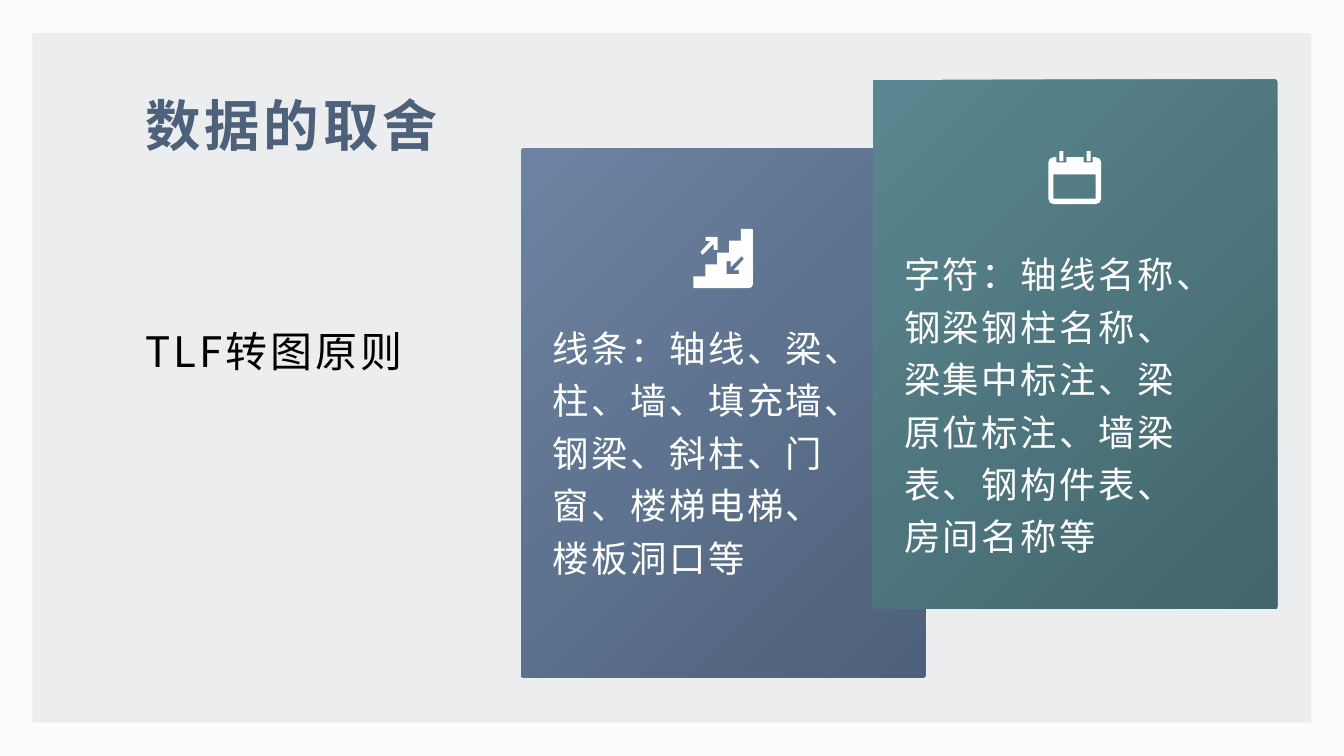
from dataclasses import dataclass

from lxml.etree import SubElement
from pptx import Presentation
from pptx.dml.color import RGBColor
from pptx.enum.lang import MSO_LANGUAGE_ID as Language
from pptx.enum.shapes import MSO_SHAPE as Shape
from pptx.enum.text import MSO_ANCHOR as Anchor, MSO_AUTO_SIZE as AutoSize, PP_ALIGN as Align
from pptx.oxml.ns import qn
from pptx.slide import Slide
from pptx.text.text import TextFrame
from pptx.util import Pt

FONT = "Noto Sans CJK SC"
COLORS = {
    "page": "FCFCFD", "panel": "ECEDEF", "title": "4E617A", "black": "000000", "white": "FFFFFF",
    "blue light": "6B82A0", "blue dark": "4E617A", "teal light": "598690", "teal dark": "43656C",
}
ICON_UNIT = Pt(0.072)
Point = tuple[int, int]
Contour = list[Point]


@dataclass(frozen=True)
class TextStyle:
    size: float
    color: str
    tracking: float
    bold: bool = False
    line_spacing: float = 1.0
    space_after: float = 0


@dataclass(frozen=True)
class Card:
    left: float
    top: float
    hue: str
    text: str
    text_top: float
    icon_left: float
    icon_top: float
    icon: list[Contour]


TITLE = TextStyle(39.6, "title", 2.8, bold=True, line_spacing=1.1)
SUBTITLE = TextStyle(30, "black", 2.2)
BODY = TextStyle(26, "white", 1.8, line_spacing=1.2, space_after=8)


def color(name: str) -> RGBColor:
    return RGBColor.from_string(COLORS[name])


def rectangle(left: int, top: int, right: int, bottom: int) -> Contour:
    return [(left, top), (right, top), (right, bottom), (left, bottom)]


def stairs_icon() -> list[Contour]:
    tread = 118
    outline = [(580, 0), (590, 10), (590, 550), (578, 578), (550, 590)]
    for step in range(5):
        x = tread * step
        y = tread * (4 - step)
        outline += [(x, y + tread), (x, y)]
    down_arrow = [(480, 270), (370, 380), (370, 320), (330, 320), (330, 450),
                  (450, 450), (450, 410), (400, 410), (500, 300)]
    up_arrow = [(570 - x, 530 - y) for x, y in down_arrow]
    return [outline, down_arrow, up_arrow]


def calendar_icon() -> list[Contour]:
    body = [(470, 60), (440, 60), (440, 110), (350, 110), (350, 60), (180, 60), (180, 110),
            (80, 110), (80, 60), (50, 60), (15, 75), (0, 110), (0, 470), (15, 510), (50, 525),
            (470, 525), (510, 510), (525, 470), (525, 110), (510, 75)]
    return [body, rectangle(50, 230, 470, 470),
            rectangle(110, 0, 150, 100), rectangle(380, 0, 420, 100)]


CARDS = [
    Card(372.24, 105.84, "blue", "线条：轴线、梁、柱、墙、填充墙、钢梁、斜柱、门窗、楼梯电梯、楼板洞口等",
         223.2, 495.36, 163.44, stairs_icon()),
    Card(623.52, 56.88, "teal", "字符：轴线名称、钢梁钢柱名称、梁集中标注、梁原位标注、墙梁表、钢构件表、房间名称等",
         170.64, 748.8, 108, calendar_icon()),
]


def write_text(frame: TextFrame, text: str, style: TextStyle) -> None:
    frame.text = text
    frame.word_wrap = True
    frame.auto_size = AutoSize.NONE
    para = frame.paragraphs[0]
    para.alignment = Align.LEFT
    para.line_spacing = style.line_spacing
    para.space_before = Pt(0)
    para.space_after = Pt(style.space_after)
    for span in para.runs:
        font = span.font
        font.name = FONT
        font.size = Pt(style.size)
        font.bold = style.bold
        font.color.rgb = color(style.color)
        font.language_id = Language.SIMPLIFIED_CHINESE
        properties = span._r.get_or_add_rPr()
        properties.set("spc", str(round(style.tracking * 100)))
        SubElement(properties, qn("a:ea"), typeface=FONT)


def set_heading_margins(frame: TextFrame) -> None:
    frame.margin_left = frame.margin_right = Pt(5)
    frame.margin_top = frame.margin_bottom = Pt(2.5)


def draw_panel(page: Slide) -> None:
    panel = page.shapes.add_shape(Shape.RECTANGLE, Pt(23.04), Pt(23.76), Pt(913.68), Pt(492.48))
    panel.shadow.inherit = False
    panel.fill.solid()
    panel.fill.fore_color.rgb = color("panel")
    panel.line.fill.background()
    page.shapes.title.element.addprevious(panel.element)


def draw_headings(page: Slide) -> None:
    title = page.shapes.title
    title.left, title.top, title.width, title.height = Pt(98.64), Pt(46.8), Pt(232.56), Pt(68.4)
    title.text_frame.vertical_anchor = Anchor.BOTTOM
    set_heading_margins(title.text_frame)
    write_text(title.text_frame, "数据的取舍", TITLE)
    subtitle = page.shapes.add_textbox(Pt(98.64), Pt(230.4), Pt(249.12), Pt(54.72))
    set_heading_margins(subtitle.text_frame)
    write_text(subtitle.text_frame, "TLF转图原则", SUBTITLE)


def draw_card(page: Slide, card: Card) -> None:
    box = page.shapes.add_shape(
        Shape.ROUNDED_RECTANGLE, Pt(card.left), Pt(card.top), Pt(288.72), Pt(378))
    box.adjustments[0] = 0.005
    box.shadow.inherit = False
    box.line.fill.background()
    box.fill.gradient()
    box.fill.gradient_angle = 315
    for stop, position, shade in zip(box.fill.gradient_stops, (0.02, 1), ("light", "dark")):
        stop.position = position
        stop.color.rgb = color(f"{card.hue} {shade}")


def draw_card_content(page: Slide, card: Card) -> None:
    builder = page.shapes.build_freeform(*card.icon[0][0], scale=ICON_UNIT)
    builder.add_line_segments(card.icon[0][1:], close=True)
    for contour in card.icon[1:]:
        builder.move_to(*contour[0])
        builder.add_line_segments(contour[1:], close=True)
    icon = builder.convert_to_shape(Pt(card.icon_left), Pt(card.icon_top))
    icon.shadow.inherit = False
    icon.fill.solid()
    icon.fill.fore_color.rgb = color("white")
    icon.line.fill.background()
    label = page.shapes.add_textbox(
        Pt(card.left + 15.12), Pt(card.text_top), Pt(236.16), Pt(239.04))
    write_text(label.text_frame, card.text, BODY)


def main() -> None:
    deck = Presentation()
    deck.slide_width, deck.slide_height = Pt(960), Pt(540)
    page = deck.slides.add_slide(deck.slide_layouts[5])
    page.background.fill.solid()
    page.background.fill.fore_color.rgb = color("page")
    draw_panel(page)
    draw_headings(page)
    for card in CARDS:
        draw_card(page, card)
    for card in CARDS:
        draw_card_content(page, card)
    deck.save("out.pptx")


if __name__ == "__main__":
    main()
